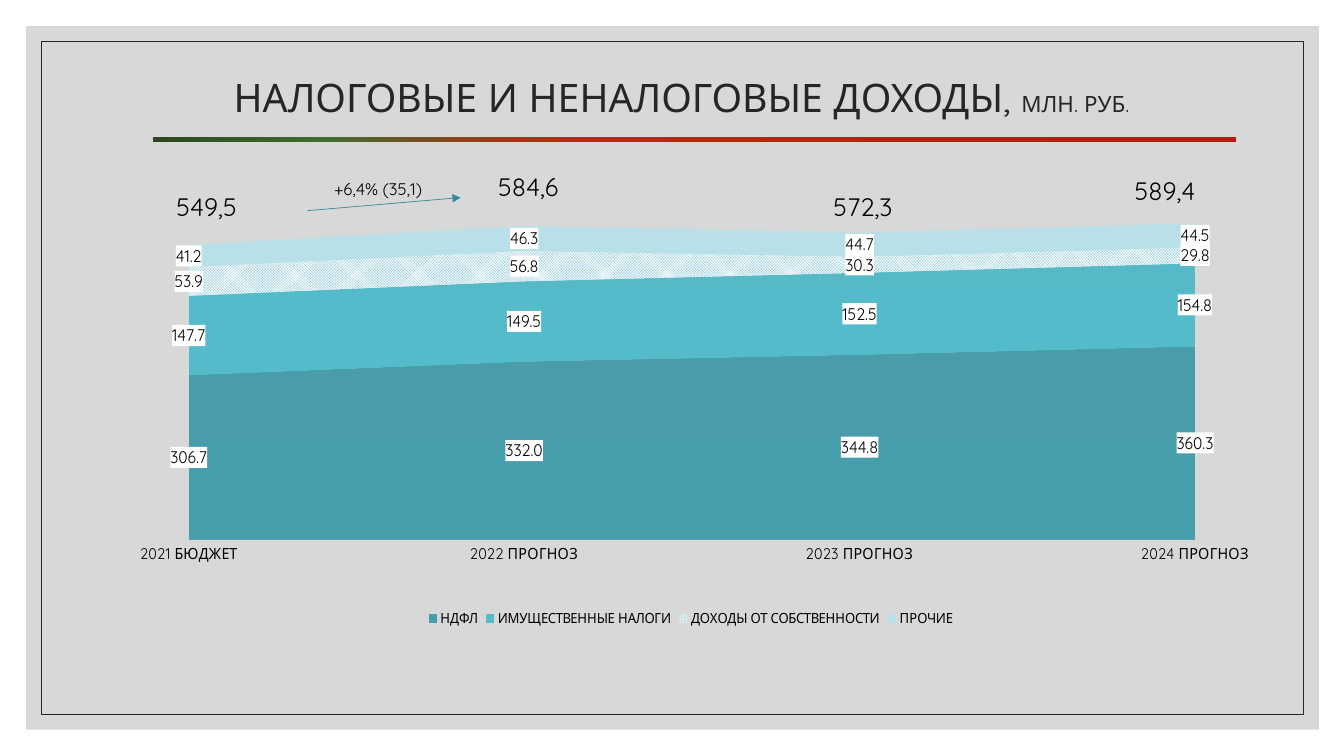
import pptx
import pptx.chart.data
import pptx.dml.color
import pptx.enum.chart
import pptx.enum.dml
import pptx.enum.shapes
import pptx.enum.text
import pptx.oxml
import pptx.oxml.ns
import pptx.util
from pptx.util import Inches

FONT = "Quicksand"
COLORS = {
    "panel": "BFBFBF", "ink": "262626", "text": "000000", "white": "FFFFFF",
    "grid": "D9D9D9", "arrow": "3488A0", "check": "78BFD3",
}
RULE_STOPS = [(0, "2C4820"), (16, "416C2F"), (39, "C6210E"), (100, "C21414")]
YEARS = ["2021 БЮДЖЕТ", "2022 ПРОГНОЗ", "2023 ПРОГНОЗ", "2024 ПРОГНОЗ"]
# Name, values, gradient stops (None for the checked pattern)
INCOME = [
    ("НДФЛ", (306.7, 332.0, 344.8, 360.3),
     [(0, "499CA9"), (50, "469DAB"), (100, "469DAA")]),
    ("ИМУЩЕСТВЕННЫЕ НАЛОГИ", (147.7, 149.5, 152.5, 154.8),
     [(0, "56B9C8"), (50, "53BBCA"), (100, "53BAC9")]),
    ("ДОХОДЫ ОТ СОБСТВЕННОСТИ", (53.9, 56.8, 30.3, 29.8), None),
    ("ПРОЧИЕ", (41.2, 46.3, 44.7, 44.5),
     [(0, "B9E0E8"), (50, "B7E0E9"), (100, "B6DFE8")]),
]
TOTALS = [
    ("549,5", 1.52, 1.85, 1.06), ("584,6", 4.71, 1.65, 1.06),
    ("572,3", 8.03, 1.85, 1.06), ("589,4", 10.95, 1.69, 1.21),
]


def rgb(name):
    return pptx.dml.color.RGBColor.from_string(COLORS[name])


def xml(text):
    ns = pptx.oxml.ns.nsdecls("a", "c")
    head, rest = text.split(">", 1)
    if head.endswith("/"):
        return pptx.oxml.parse_xml(f"{head[:-1]} {ns}/>{rest}")
    return pptx.oxml.parse_xml(f"{head} {ns}>{rest}")


def find(element, tag):
    return element.find(".//" + pptx.oxml.ns.qn(tag))


def style_font(font, size, color="text"):
    font.name = FONT
    font.size = pptx.util.Pt(size)
    font.color.rgb = rgb(color)


def fill_gradient(fill, element, stops, angle):
    fill.gradient()
    fill.gradient_angle = angle
    gs = "".join(f'<a:gs pos="{pos * 1000}"><a:srgbClr val="{color}"/></a:gs>'
                 for pos, color in stops)
    old = find(element, "a:gsLst")
    old.getparent().replace(old, xml(f"<a:gsLst>{gs}</a:gsLst>"))


def add_rect(s, x, y, w, h):
    sp = s.shapes.add_shape(pptx.enum.shapes.MSO_SHAPE.RECTANGLE,
                            Inches(x), Inches(y), Inches(w), Inches(h))
    sp.shadow.inherit = False
    sp.fill.background()
    sp.line.fill.background()
    return sp


def add_background(s):
    panel = add_rect(s, 0.26, 0.26, 12.82, 6.98)
    panel.fill.solid()
    panel.fill.fore_color.rgb = rgb("panel")
    find(panel._element, "a:srgbClr").append(xml('<a:alpha val="60000"/>'))
    frame = add_rect(s, 0.41, 0.41, 12.52, 6.68)
    frame.line.color.rgb = rgb("ink")
    frame.line.width = pptx.util.Pt(0.5)
    # Keep the title in front of the frame
    frame._element.addnext(s.shapes.title._element)


def add_title(s):
    sp = s.shapes.title
    sp.left, sp.top, sp.width, sp.height = map(Inches, (1.26, 0.57, 11, 0.84))
    tf = sp.text_frame
    tf.word_wrap = True
    tf.vertical_anchor = pptx.enum.text.MSO_ANCHOR.MIDDLE
    p = tf.paragraphs[0]
    p.alignment = pptx.enum.text.PP_ALIGN.CENTER
    p.line_spacing = 0.9
    for text, size in (("НАЛОГОВЫЕ И НЕНАЛОГОВЫЕ ДОХОДЫ, ", 28), ("МЛН. РУБ.", 16)):
        r = p.add_run()
        r.text = text
        style_font(r.font, size, "ink")


def add_label(s, text, x, y, w, h, size):
    tf = s.shapes.add_textbox(Inches(x), Inches(y), Inches(w), Inches(h)).text_frame
    tf.word_wrap = True
    tf.auto_size = pptx.enum.text.MSO_AUTO_SIZE.SHAPE_TO_FIT_TEXT
    tf.text = text
    p = tf.paragraphs[0]
    p.alignment = pptx.enum.text.PP_ALIGN.CENTER
    style_font(p.runs[0].font, size)


def add_arrow(s, x1, y1, x2, y2):
    line = s.shapes.add_connector(pptx.enum.shapes.MSO_CONNECTOR.STRAIGHT,
                                  Inches(x1), Inches(y1), Inches(x2), Inches(y2))
    line.line.color.rgb = rgb("arrow")
    line.line.width = pptx.util.Pt(0.5)
    find(line._element, "a:ln").append(xml('<a:tailEnd type="triangle"/>'))
    line._element.spPr.append(xml("<a:effectLst/>"))


def style_series(series, stops):
    fill = series.format.fill
    if stops:
        fill_gradient(fill, series._element, stops, 270)
    else:
        fill.patterned()
        fill.pattern = pptx.enum.dml.MSO_PATTERN.SMALL_CHECKER_BOARD
        fill.fore_color.rgb = rgb("check")
        fill.back_color.rgb = rgb("white")
    labels = series.data_labels
    labels.show_value = True
    labels.number_format = "0.0"
    labels.number_format_is_linked = False
    style_font(labels.font, 12)
    find(labels._element, "c:txPr").addprevious(xml(
        f'<c:spPr><a:solidFill><a:srgbClr val="{COLORS["white"]}"/>'
        "</a:solidFill></c:spPr>"))


def set_plot_layout(chart, x, y, w, h):
    area = find(chart._chartSpace, "c:plotArea")
    old = area.find(pptx.oxml.ns.qn("c:layout"))
    if old is not None:
        area.remove(old)
    sizes = "".join(f'<c:{tag} val="{value}"/>'
                    for tag, value in zip("xywh", (x, y, w, h)))
    area.insert(0, xml(
        '<c:layout><c:manualLayout><c:layoutTarget val="inner"/>'
        '<c:xMode val="edge"/><c:yMode val="edge"/>'
        f"{sizes}</c:manualLayout></c:layout>"))


def add_income_chart(s):
    data = pptx.chart.data.CategoryChartData(number_format="0.0")
    data.categories = YEARS
    for name, values, _ in INCOME:
        data.add_series(name, values)
    chart = s.shapes.add_chart(
        pptx.enum.chart.XL_CHART_TYPE.AREA_STACKED,
        Inches(1.39), Inches(1.49), Inches(11), Inches(4.77), data).chart
    style_font(chart.font, 10)
    chart.has_title = False
    chart.has_legend = True
    chart.legend.position = pptx.enum.chart.XL_LEGEND_POSITION.BOTTOM
    chart.legend.include_in_layout = False
    style_font(chart.legend.font, 10)
    for series, (_, _, stops) in zip(chart.plots[0].series, INCOME):
        style_series(series, stops)

    # Axes
    years = chart.category_axis
    years.major_tick_mark = pptx.enum.chart.XL_TICK_MARK.NONE
    years.has_major_gridlines = False
    years.format.line.color.rgb = rgb("grid")
    years.format.line.width = pptx.util.Pt(1)
    style_font(years.tick_labels.font, 11)
    amounts = chart.value_axis
    amounts.visible = False
    amounts.minimum_scale, amounts.maximum_scale = 0, 700
    amounts.major_gridlines.format.line.color.rgb = rgb("grid")
    amounts.major_gridlines.format.line.width = pptx.util.Pt(0.75)
    find(chart._chartSpace, "c:crossBetween").set("val", "midCat")
    set_plot_layout(chart, 0.015, 0.029, 0.972, 0.781)


def main():
    prs = pptx.Presentation()
    prs.slide_width, prs.slide_height = Inches(13.33), Inches(7.5)
    s = prs.slides.add_slide(prs.slide_layouts[5])

    # Background and heading
    add_background(s)
    add_title(s)

    # Chart, with the rule above it
    add_income_chart(s)
    rule = add_rect(s, 1.52, 1.36, 10.74, 0.05)
    fill_gradient(rule.fill, rule._element, RULE_STOPS, 0)

    # Totals and growth
    for text, x, y, w in TOTALS:
        add_label(s, text, x, y, w, 0.4, 18)
    add_arrow(s, 3.05, 2.09, 4.57, 1.96)
    add_label(s, "+6,4% (35,1)", 3.04, 1.72, 1.42, 0.3, 12)

    prs.save("out.pptx")


if __name__ == "__main__":
    main()
